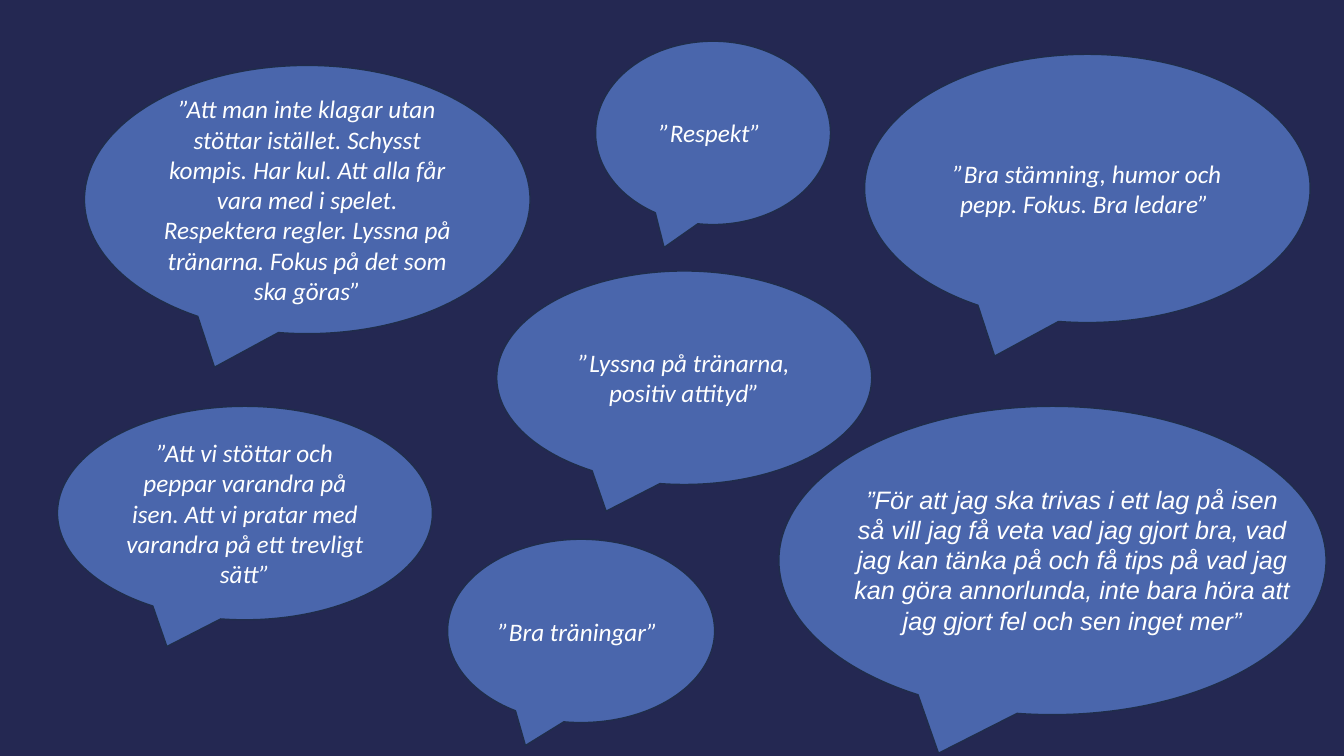
from dataclasses import dataclass

import pptx
import pptx.dml.color
import pptx.enum.shapes
import pptx.enum.text
import pptx.util
from pptx.util import Cm


def rgb(value):
    return pptx.dml.color.RGBColor.from_string(value)


@dataclass(frozen=True)
class Theme:
    background: str = "242852"
    bubble: str = "4A66AC"
    outline: str = "202D4B"
    text: str = "FFFFFF"
    quote_font: str = "Calibri"
    long_quote_font: str = "Arial"
    quote_size: int = 18
    outline_width: int = 1


THEME = Theme()

# Bubble sizes in cm: width, height
SMALL = (5.92, 4.62)
SMALL_WIDE = (6.73, 4.62)
MEDIUM = (9.45, 5.38)
LARGE = (11.23, 6.76)
LONG = (13.79, 7.77)

# Left, top, size, quote
QUOTES = [
    (21.79, 1.37, LARGE, "”Bra stämning, humor och pepp. Fokus. Bra ledare” "),
    (15.01, 1.04, SMALL, "”Respekt” "),
    (2.13, 1.65, LARGE,
     "”Att man inte klagar utan stöttar istället. Schysst kompis. Har kul. "
     "Att alla får vara med i spelet. Respektera regler. Lyssna på tränarna. "
     "Fokus på det som ska göras”"),
    (12.52, 6.83, MEDIUM, "”Lyssna på tränarna, positiv attityd”"),
    (1.45, 10.24, MEDIUM,
     "”Att vi stöttar och peppar varandra på isen. Att vi pratar med "
     "varandra på ett trevligt sätt”"),
    (11.28, 13.59, SMALL_WIDE, "”Bra träningar” "),
]
LONG_QUOTE = (
    "”För att jag ska trivas i ett lag på isen så vill jag få veta vad jag "
    "gjort bra, vad jag kan tänka på och få tips på vad jag kan göra "
    "annorlunda, inte bara höra att jag gjort fel och sen inget mer”"
)


def write_quote(frame, quote, font_name):
    frame.word_wrap = True
    frame.text = quote
    paragraph = frame.paragraphs[0]
    paragraph.alignment = pptx.enum.text.PP_ALIGN.CENTER
    font = paragraph.runs[0].font
    font.name = font_name
    font.size = pptx.util.Pt(THEME.quote_size)
    font.italic = True
    font.color.rgb = rgb(THEME.text)


def add_bubble(slide, left, top, size):
    width, height = size
    bubble = slide.shapes.add_shape(
        pptx.enum.shapes.MSO_SHAPE.OVAL_CALLOUT,
        Cm(left), Cm(top), Cm(width), Cm(height))
    bubble.shadow.inherit = False
    bubble.fill.solid()
    bubble.fill.fore_color.rgb = rgb(THEME.bubble)
    bubble.line.color.rgb = rgb(THEME.outline)
    bubble.line.width = pptx.util.Pt(THEME.outline_width)
    return bubble


def add_quote_bubble(slide, left, top, size, quote):
    frame = add_bubble(slide, left, top, size).text_frame
    frame.vertical_anchor = pptx.enum.text.MSO_ANCHOR.MIDDLE
    write_quote(frame, quote, THEME.quote_font)


def add_long_quote_bubble(slide, left, top, size, quote):
    """Lay the quote in its own box, wider than the bubble's text area."""
    add_bubble(slide, left, top, size)
    quote_box = slide.shapes.add_textbox(
        Cm(left + 1.65), Cm(top + 1.83), Cm(size[0] - 2.31), Cm(4.11))
    write_quote(quote_box.text_frame, quote, THEME.long_quote_font)
    quote_box.text_frame.auto_size = (
        pptx.enum.text.MSO_AUTO_SIZE.SHAPE_TO_FIT_TEXT)


def build_quotes_slide(deck):
    slide = deck.slides.add_slide(deck.slide_layouts.get_by_name("Blank"))
    slide.background.fill.solid()
    slide.background.fill.fore_color.rgb = rgb(THEME.background)
    *first_quotes, last_quote = QUOTES
    for left, top, size, quote in first_quotes:
        add_quote_bubble(slide, left, top, size, quote)
    add_long_quote_bubble(slide, 19.63, 10.24, LONG, LONG_QUOTE)
    add_quote_bubble(slide, *last_quote)


def main():
    deck = pptx.Presentation()
    deck.slide_width = Cm(33.87)
    deck.slide_height = Cm(19.05)
    build_quotes_slide(deck)
    deck.save("out.pptx")


if __name__ == "__main__":
    main()
